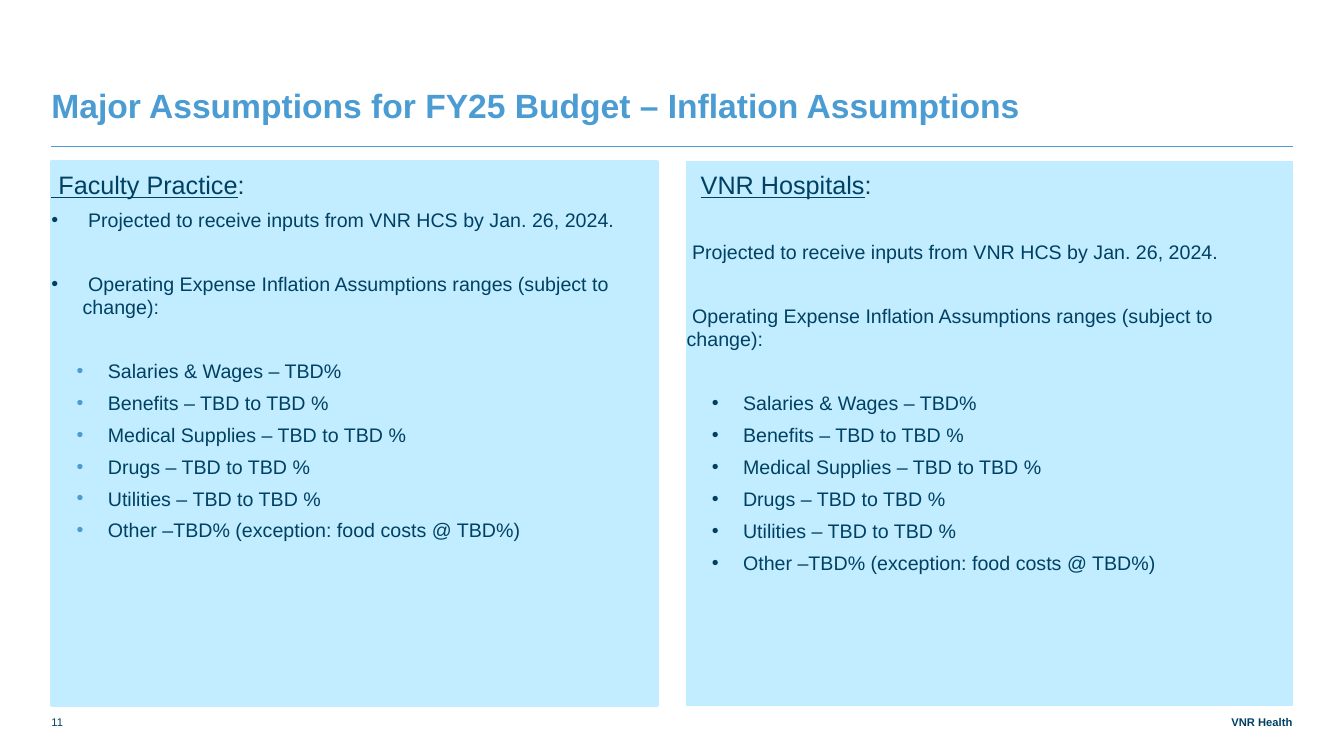
from lxml import etree
from pptx import Presentation
from pptx import util as u
from pptx.dml.color import RGBColor
from pptx.enum import shapes, text
from pptx.oxml.ns import qn

NAVY, BLUE, PALE = "004163", "4B9CD3", "C2ECFF"
MARGIN, PANEL_WIDTH, CONTENT_WIDTH = 0.51, 6.01, 12.31
INPUTS = " Projected to receive inputs from VNR HCS by Jan. 26, 2024."
RANGES = " Operating Expense Inflation Assumptions ranges (subject to change):"
EXPENSES = [
    "Salaries & Wages – TBD%",
    "Benefits – TBD to TBD %",
    "Medical Supplies – TBD to TBD %",
    "Drugs – TBD to TBD %",
    "Utilities – TBD to TBD %",
    "Other –TBD% (exception: food costs @ TBD%)",
]


def rgb(value):
    """Turn a hex string into a colour."""
    return RGBColor.from_string(value)


def style_runs(paragraph, size, color=NAVY, bold=False):
    """Format every run of a paragraph."""
    for run in paragraph.runs:
        run.font.name = "Arial"
        run.font.size = u.Pt(size)
        run.font.bold = bold
        run.font.color.rgb = rgb(color)


def set_frame(frame, top=0, anchor=text.MSO_ANCHOR.TOP):
    """Wrap a text frame and clear its side insets."""
    frame.word_wrap = True
    frame.vertical_anchor = anchor
    frame.margin_left = frame.margin_right = frame.margin_bottom = 0
    frame.margin_top = u.Inches(top)


def add_label(slide, box, words, size, color=NAVY, bold=False, align=text.PP_ALIGN.LEFT):
    """Add one line of text at the bottom of a box."""
    shape = slide.shapes.add_textbox(*map(u.Inches, box))
    set_frame(shape.text_frame, anchor=text.MSO_ANCHOR.BOTTOM)
    paragraph = shape.text_frame.paragraphs[0]
    paragraph.text = words
    paragraph.alignment = align
    style_runs(paragraph, size, color, bold)
    return paragraph


def add_bullet(paragraph, left, color):
    """Give a paragraph a hanging round bullet."""
    properties = paragraph._p.get_or_add_pPr()
    properties.set("marL", str(u.Inches(left)))
    properties.set("indent", str(u.Inches(-0.31)))
    bullet_color = etree.SubElement(properties, qn("a:buClr"))
    etree.SubElement(bullet_color, qn("a:srgbClr"), val=color)
    etree.SubElement(properties, qn("a:buFont"), typeface="Arial")
    etree.SubElement(properties, qn("a:buChar"), char="•")


def add_item(frame, words, after=6, bullet_left=None, bullet_color=NAVY):
    """Append a body paragraph, with a bullet if its indent is given."""
    paragraph = frame.add_paragraph()
    paragraph.text = words
    paragraph.alignment = text.PP_ALIGN.LEFT
    paragraph.space_after = u.Pt(after)
    if bullet_left is not None:
        add_bullet(paragraph, bullet_left, bullet_color)
    style_runs(paragraph, 14)


def add_panel(slide, box, heading, heading_indent, heading_after, line_width, note_left, bullet_color):
    """Add a filled panel with a heading, two notes and the expense list."""
    shape = slide.shapes.add_shape(shapes.MSO_SHAPE.RECTANGLE, *map(u.Inches, box))
    shape.shadow.inherit = False
    shape.fill.solid()
    shape.fill.fore_color.rgb = rgb(PALE)
    shape.line.color.rgb = rgb(PALE)
    shape.line.width = u.Pt(line_width)
    frame = shape.text_frame
    set_frame(frame, 0.08)
    title = frame.paragraphs[0]
    title.alignment = text.PP_ALIGN.LEFT
    title.space_after = u.Pt(heading_after)
    title._p.get_or_add_pPr().set("marL", str(u.Inches(heading_indent)))
    for words, underlined in ((heading, True), (":", False)):
        run = title.add_run()
        run.text = words
        run.font.underline = underlined
    style_runs(title, 18)
    for note in (INPUTS, RANGES):
        add_item(frame, note, 28.6, note_left)
    for expense in EXPENSES:
        add_item(frame, expense, 6, 0.56, bullet_color)


def add_header(slide, left, top, width):
    """Add the title and the rule below it."""
    title = add_label(slide, (left, top, width, 0.79),
                      "Major Assumptions for FY25 Budget – Inflation Assumptions", 24, BLUE, True)
    title.line_spacing = u.Pt(28)
    rule_top = u.Inches(top + 1)
    rule = slide.shapes.add_connector(shapes.MSO_CONNECTOR.STRAIGHT, u.Inches(left), rule_top,
                                      u.Inches(left + width), rule_top)
    rule.line.color.rgb = rgb(BLUE)
    rule.line.width = u.Pt(0.5)
    etree.SubElement(rule._element.spPr, qn("a:effectLst"))


def add_footer(slide, left, top, width):
    """Add the page number and the organisation name."""
    add_label(slide, (left, top, 0.46, 0.23), "11", 8)
    add_label(slide, (left + width - 1.64, top, 1.64, 0.23), "VNR Health", 8,
              bold=True, align=text.PP_ALIGN.RIGHT)


def main():
    """Build and save the slide."""
    presentation = Presentation()
    presentation.slide_width = u.Inches(13.33)
    presentation.slide_height = u.Inches(7.5)
    slide = presentation.slides.add_slide(presentation.slide_layouts[6])
    add_header(slide, MARGIN, 0.45, CONTENT_WIDTH)
    right = MARGIN + CONTENT_WIDTH - PANEL_WIDTH
    add_panel(slide, (MARGIN, 1.6, PANEL_WIDTH, 5.4), " Faculty Practice", 0, 6, 2.25, 0.31, BLUE)
    add_panel(slide, (right, 1.6, PANEL_WIDTH, 5.4), "VNR Hospitals", 0.14, 29, 0.75, None, NAVY)
    add_footer(slide, MARGIN, 7, CONTENT_WIDTH)
    presentation.save("out.pptx")


if __name__ == "__main__":
    main()
